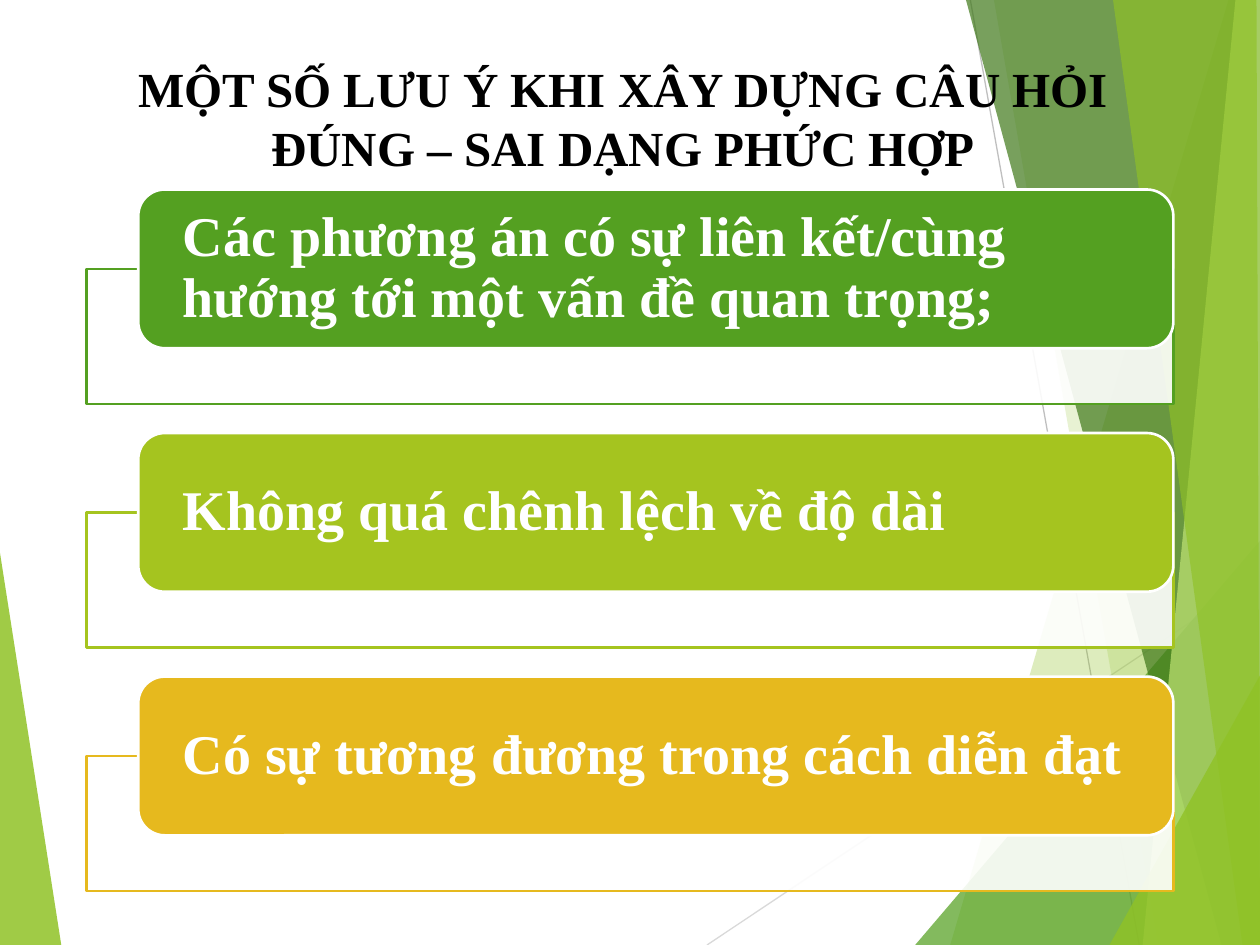
from dataclasses import dataclass

from lxml import etree
from pptx import Presentation
from pptx.dml.color import RGBColor
from pptx.enum import shapes, text
from pptx.oxml import ns
from pptx.util import Pt


@dataclass(frozen=True)
class Theme:
    font: str = "Times New Roman"
    title_size: float = 28
    item_size: float = 32
    line: float = 1.5
    hairline: float = 0.75
    black: str = "000000"
    white: str = "FFFFFF"
    lime: str = "90C226"
    pale_lime: str = "C0E474"
    green: str = "54A021"
    dark_green: str = "3F7819"
    olive: str = "A5C41F"
    gold: str = "E6B91E"
    gray: str = "BFBFBF"
    light_gray: str = "D9D9D9"


T = Theme()
WIDTH, HEIGHT = 720, 540

# Facets: corners in points, colour, opacity in percent
FACETS = [
    ([(0, 316), (35.3, 540), (0, 540)], T.lime, 85),
    ([(702, 0), (543, 540), (720, 540), (720, 0)], T.lime, 30),
    ([(567.5, 0), (661.5, 540), (720, 540), (720, 0)], T.lime, 20),
    ([(522.7, 540), (720, 309), (720, 540)], T.green, 72),
    ([(552.3, 0), (698.5, 540), (720, 540), (720, 0)], T.dark_green, 70),
    ([(706.5, 0), (653, 540), (720, 540), (720, 0)], T.pale_lime, 70),
    ([(636, 0), (710, 540), (720, 540), (718.5, 0)], T.lime, 65),
    ([(634.5, 540), (720, 385.5), (720, 540)], T.lime, 80),
]
RAYS = [
    ((404, 540), (720, 329), T.light_gray),
    ((554.5, 0), (651, 540), T.gray),
]
ITEMS = [
    ("Các phương án có sự liên kết/cùng hướng tới một vấn đề quan trọng;", T.green),
    ("Không quá chênh lệch về độ dài", T.olive),
    ("Có sự tương đương trong cách diễn đạt", T.gold),
]


def paint(s, color, opacity=100, line=None):
    s.shadow.inherit = False
    s.fill.solid()
    s.fill.fore_color.rgb = RGBColor.from_string(color)
    if opacity < 100:
        clr = s.fill._xPr.find(".//" + ns.qn("a:srgbClr"))
        etree.SubElement(clr, ns.qn("a:alpha")).set("val", str(opacity * 1000))
    if line:
        s.line.color.rgb = RGBColor.from_string(line)
        s.line.width = Pt(T.line)
    else:
        s.line.fill.background()


def write(s, words, size, color, align, anchor, margins):
    tf = s.text_frame
    tf.word_wrap = True
    tf.vertical_anchor = anchor
    tf.margin_left = tf.margin_right = Pt(margins[0])
    tf.margin_top = tf.margin_bottom = Pt(margins[1])
    p = tf.paragraphs[0]
    p.text = words
    p.alignment = align
    p.font.name = T.font
    p.font.size = Pt(size)
    p.font.bold = True
    p.font.color.rgb = RGBColor.from_string(color)
    return p


def add_facet(slide, x, y, corners, color, opacity):
    points = [(x + px, y + py) for px, py in corners]
    builder = slide.shapes.build_freeform(*points[0], scale=Pt(1))
    builder.add_line_segments(points[1:], close=True)
    paint(builder.convert_to_shape(), color, opacity)


def add_ray(slide, x, y, start, end, color):
    ray = slide.shapes.add_connector(
        shapes.MSO_CONNECTOR.STRAIGHT,
        Pt(x + start[0]), Pt(y + start[1]), Pt(x + end[0]), Pt(y + end[1]))
    ray.line.color.rgb = RGBColor.from_string(color)
    ray.line.width = Pt(T.hairline)
    etree.SubElement(ray._element.spPr, ns.qn("a:effectLst"))


def add_backdrop(slide, x, y):
    add_facet(slide, x, y, *FACETS[0])
    for ray in RAYS:
        add_ray(slide, x, y, *ray)
    for facet in FACETS[1:]:
        add_facet(slide, x, y, *facet)


def add_title(slide, x, y, w, h):
    s = slide.shapes.add_textbox(Pt(x), Pt(y), Pt(w), Pt(h))
    write(s, "MỘT SỐ LƯU Ý KHI XÂY DỰNG CÂU HỎI ĐÚNG – SAI DẠNG PHỨC HỢP",
          T.title_size, T.black, text.PP_ALIGN.CENTER,
          text.MSO_ANCHOR.TOP, (7.2, 3.6))


def add_item(slide, x, y, w, h, words, color):
    # Outlined frame, starting halfway down the label
    label_h, indent = 90.7, 29.5
    frame = slide.shapes.add_shape(
        shapes.MSO_SHAPE.RECTANGLE,
        Pt(x), Pt(y + label_h / 2), Pt(w), Pt(h - label_h / 2))
    paint(frame, T.white, 90, line=color)

    # Filled label
    label = slide.shapes.add_shape(
        shapes.MSO_SHAPE.ROUNDED_RECTANGLE,
        Pt(x + indent), Pt(y), Pt(w - indent), Pt(label_h))
    paint(label, color, line=T.white)
    p = write(label, words, T.item_size, T.white, text.PP_ALIGN.LEFT,
              text.MSO_ANCHOR.MIDDLE, (21, 4.5))
    p.line_spacing = 0.9


def add_item_list(slide, x, y, w, h, gap):
    item_h = (h - gap * (len(ITEMS) - 1)) / len(ITEMS)
    for i, (words, color) in enumerate(ITEMS):
        add_item(slide, x, y + i * (item_h + gap), w, item_h, words, color)


def main():
    prs = Presentation()
    prs.slide_width, prs.slide_height = Pt(WIDTH), Pt(HEIGHT)
    slide = prs.slides.add_slide(prs.slide_layouts[6])
    add_backdrop(slide, 0, 0)
    add_title(slide, 40, 30, 632, 78)
    add_item_list(slide, 49.5, 108.3, 621, 401, gap=16.5)
    prs.save("out.pptx")


if __name__ == "__main__":
    main()
